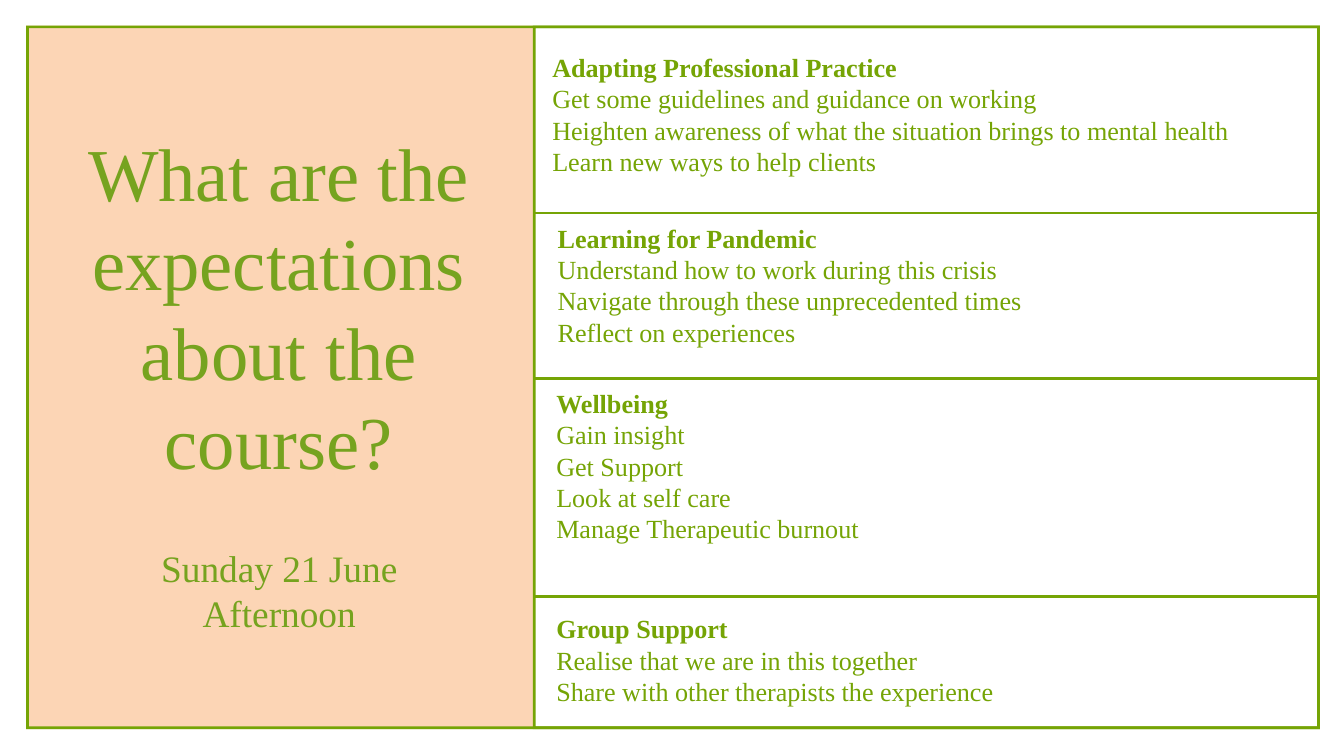
from dataclasses import dataclass
from lxml.etree import SubElement
from pptx import Presentation
from pptx.dml.color import RGBColor as Rgb
from pptx.enum.shapes import MSO_CONNECTOR as Conn, MSO_SHAPE as Shape
from pptx.enum.text import MSO_AUTO_SIZE as Auto, PP_ALIGN as Align
from pptx.oxml.ns import qn
from pptx.util import Pt

PX = 9144  # 100 px to the inch


@dataclass(frozen=True)
class Theme:
    font: str = "Times New Roman"
    peach: Rgb = Rgb(0xFC, 0xD5, 0xB5)
    green: Rgb = Rgb(0x75, 0xA4, 0x05)
    olive: Rgb = Rgb(0x76, 0xA3, 0x1F)
    # (type size, line height) in points
    title: tuple = (80, 96)
    date: tuple = (40, 48)
    body: tuple = (28, 33.5)
    edge: int = 4   # frame thickness, px
    rule: int = 3   # rule weight, pt


THEME = Theme()

TOPICS = [
    ("Adapting Professional Practice",
     "Get some guidelines and guidance on working",
     "Heighten awareness of what the situation brings to mental health",
     "Learn new ways to help clients"),
    ("Learning for Pandemic",
     "Understand how to work during this crisis",
     "Navigate through these unprecedented times",
     "Reflect on experiences"),
    ("Wellbeing",
     "Gain insight",
     "Get Support",
     "Look at self care",
     "Manage Therapeutic burnout"),
    ("Group Support",
     "Realise that we are in this together",
     "Share with other therapists the experience"),
]
# Text box of each topic, relative to the right panel
SPOTS = [(19, 34, 1169, 434), (27, 288, 1043, 269),
         (25, 534, 1050, 276), (25, 869, 927, 182)]
RULES = [279, 525, 850]


def emu(*sizes):
    return [round(size * PX) for size in sizes]


def add_text(slide, box, lines, style, color, align=Align.LEFT, pad=None):
    shape = slide.shapes.add_textbox(*emu(*box))
    frame = shape.text_frame
    frame.word_wrap = True
    frame.auto_size = Auto.SHAPE_TO_FIT_TEXT
    if pad is not None:
        frame.margin_left = frame.margin_right = pad
        frame.margin_top = frame.margin_bottom = pad
    frame.text = "\n".join(lines)
    size, height = style
    for para in frame.paragraphs:
        para.alignment = align
        para.line_spacing = Pt(height)
        for run in para.runs:
            run.font.name = THEME.font
            run.font.size = Pt(size)
            run.font.color.rgb = color
    return frame


def add_frame(slide, box):
    """Draw a hollow border just inside the box."""
    left, top, width, height = box

    def ring(inset):
        x, y = left + inset, top + inset
        right, low = left + width - inset, top + height - inset
        return [(right, y), (x, y), (x, low), (right, low)]

    outer, inner = ring(0), ring(THEME.edge)
    path = slide.shapes.build_freeform(*outer[0], scale=PX)
    path.add_line_segments(outer[1:], close=True)
    path.move_to(*inner[0])
    path.add_line_segments(inner[1:], close=True)
    shape = path.convert_to_shape()
    shape.shadow.inherit = False
    shape.fill.solid()
    shape.fill.fore_color.rgb = THEME.green
    shape.line.fill.background()


def add_rule(slide, left, right, y):
    line = slide.shapes.add_connector(Conn.STRAIGHT, *emu(left, y, right, y))
    line.line.color.rgb = THEME.green
    line.line.width = Pt(THEME.rule)
    SubElement(line._element.spPr, qn("a:effectLst"))


def add_fill(slide, box):
    panel = slide.shapes.add_shape(Shape.RECTANGLE, *emu(*box))
    panel.shadow.inherit = False
    panel.fill.solid()
    panel.fill.fore_color.rgb = THEME.peach
    panel.line.fill.background()


def add_intro(slide, box):
    """Title and date on the left panel."""
    left, top = box[:2]
    add_text(slide, (left + 43, top + 150, 666, 539),
             ["What are the expectations about the course?"],
             THEME.title, THEME.olive, Align.CENTER, pad=0)
    add_text(slide, (left + 147, top + 769, 459, 145),
             ["Sunday 21 June Afternoon"],
             THEME.date, THEME.olive, Align.CENTER)


def add_topics(slide, box):
    """Ruled list of topics on the right panel."""
    left, top, width, _ = box
    for lines, (x, y, wide, high) in zip(TOPICS, SPOTS):
        frame = add_text(slide, (left + x, top + y, wide, high), lines,
                         THEME.body, THEME.green)
        frame.paragraphs[0].runs[0].font.bold = True
    for y in RULES:
        add_rule(slide, left + 1, left + width - 1, top + y)


def main():
    deck = Presentation()
    deck.slide_width, deck.slide_height = emu(2000, 1125)
    slide = deck.slides.add_slide(deck.slide_layouts[6])

    page = (39, 38, 1925, 1047)
    side = (39, 38, 754, 1047)
    main_box = (793, 38, 1171, 1047)

    # Panels and borders
    add_fill(slide, side)
    add_frame(slide, page)
    add_frame(slide, main_box)
    # Content
    add_intro(slide, side)
    add_topics(slide, main_box)

    deck.save("out.pptx")


if __name__ == "__main__":
    main()
